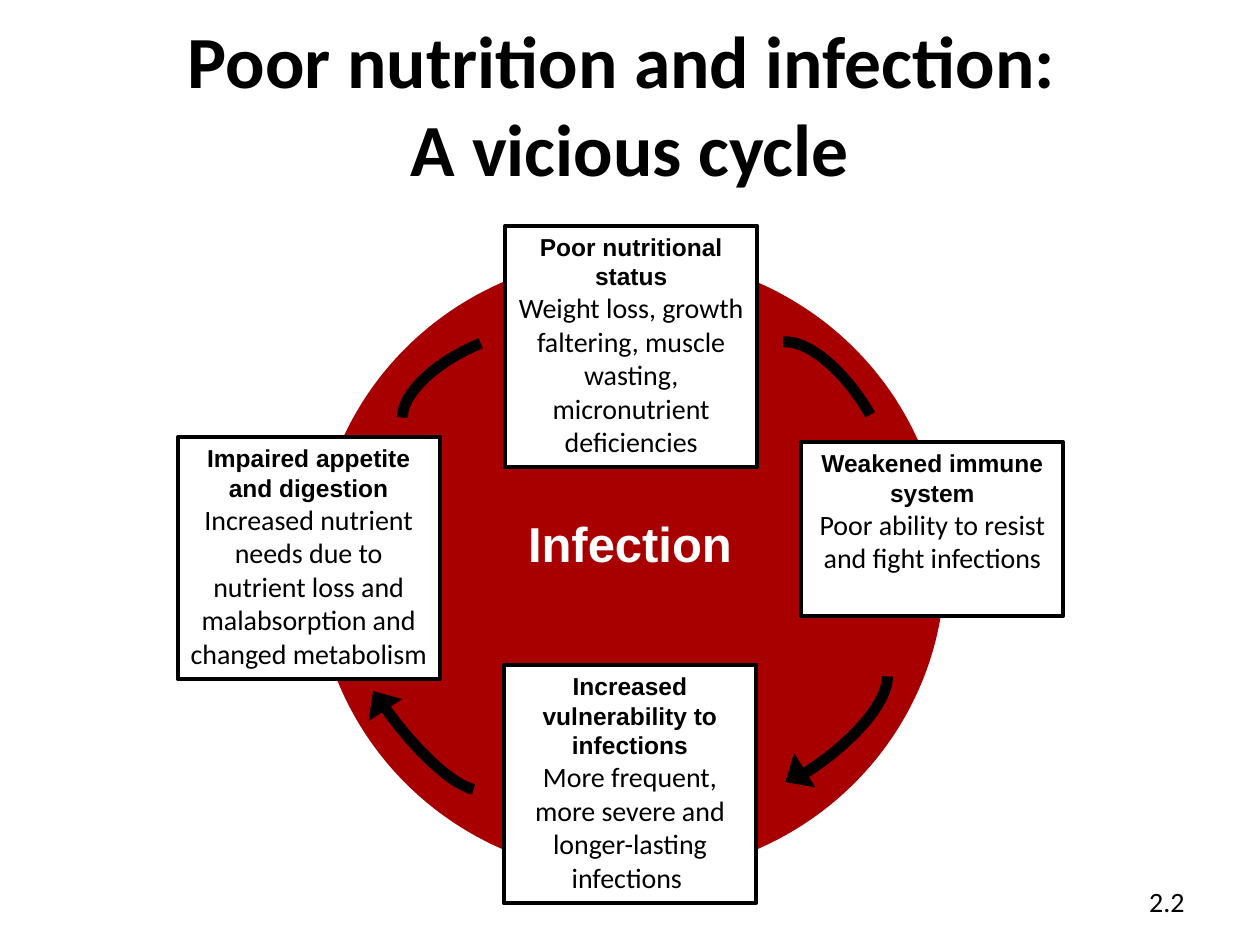
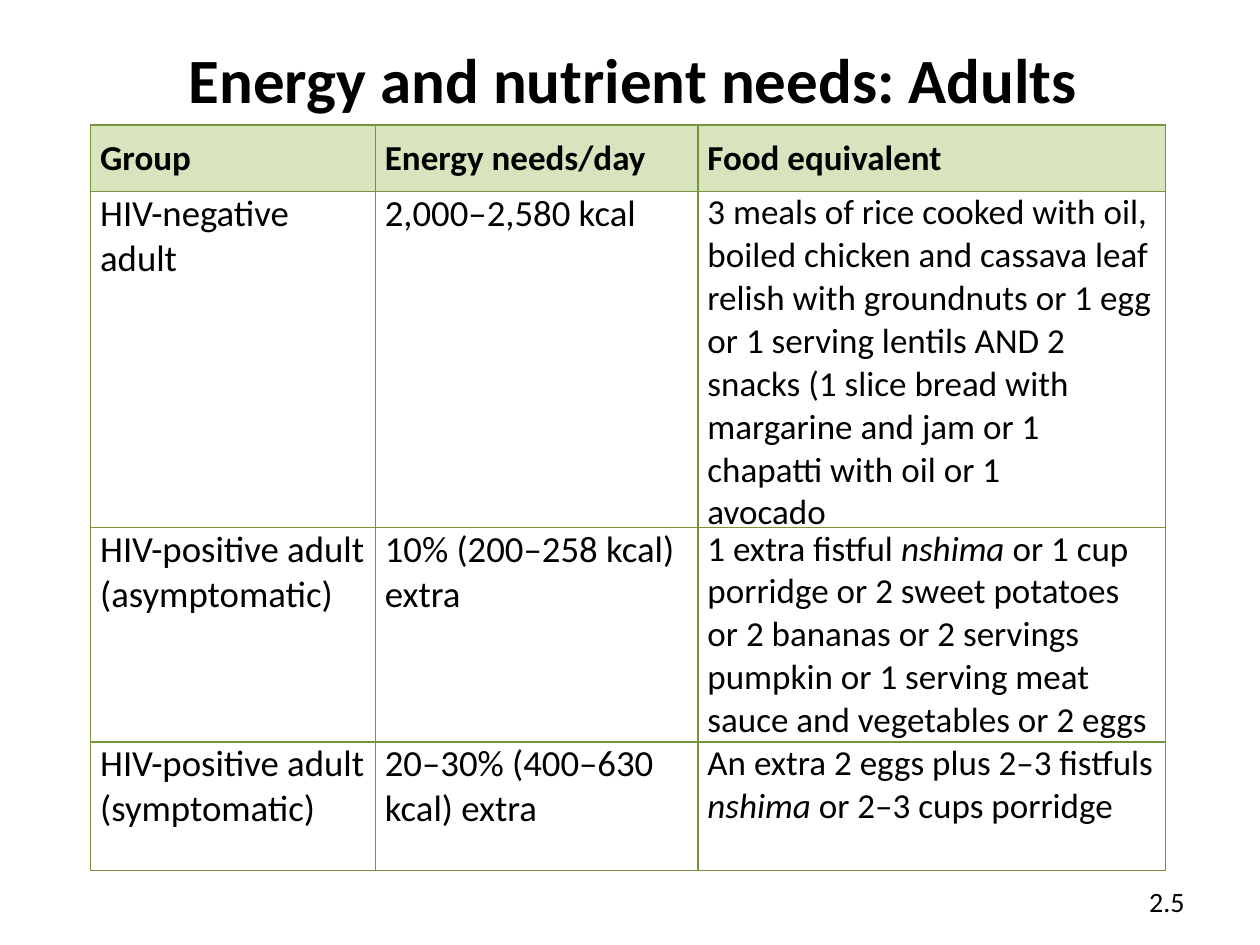
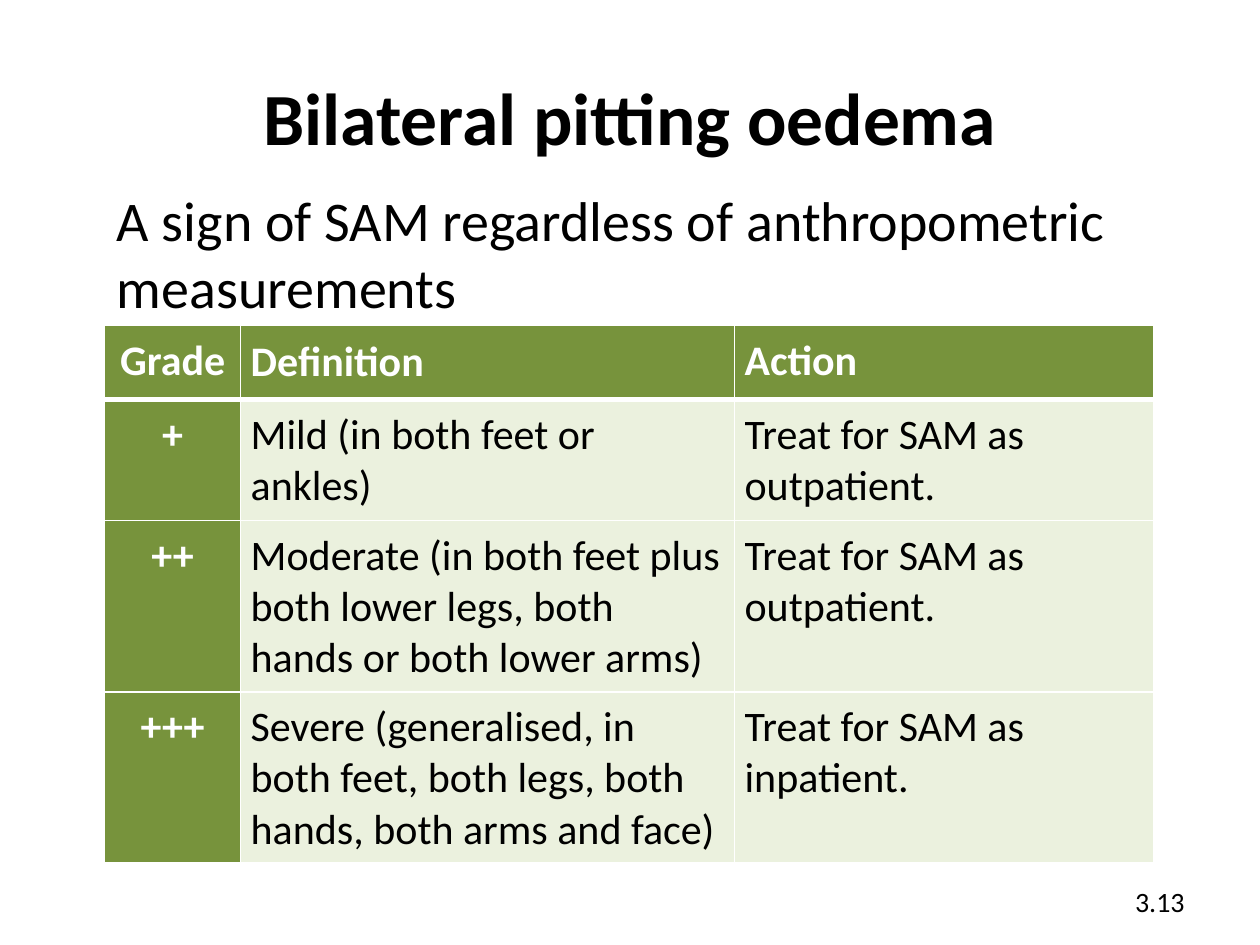
import pptx
import pptx.dml.color
import pptx.enum.shapes
import pptx.enum.text
import pptx.oxml
import pptx.oxml.ns
import pptx.util

RGBColor = pptx.dml.color.RGBColor
Align = pptx.enum.text.PP_ALIGN
Anchor = pptx.enum.text.MSO_ANCHOR
Preset = pptx.enum.shapes.MSO_SHAPE

BLACK = RGBColor(0x00, 0x00, 0x00)
WHITE = RGBColor(0xFF, 0xFF, 0xFF)
RED = RGBColor(0xA8, 0x00, 0x00)
GREEN = RGBColor(0x77, 0x93, 0x3C)
LIGHT_GREEN = RGBColor(0xD7, 0xE4, 0xBD)
PALE_GREEN = RGBColor(0xEB, 0xF1, 0xDE)

BODY_FONT = "Calibri"
LABEL_FONT = "Arial"
SLIDE_WIDTH = pptx.util.Inches(10)
SLIDE_HEIGHT = pptx.util.Inches(7.5)
GRID_COLUMNS = 100
GRID_ROWS = 75
TITLE_ONLY_LAYOUT = 5

CYCLE_BOXES = [
    ((40.1, 17.9, 20, 19.2), "Poor nutritional status",
     "Weight loss, growth faltering, muscle wasting, micronutrient deficiencies"),
    ((40, 52.8, 20, 18.9), "Increased vulnerability to infections",
     "More frequent, more severe and longer-lasting infections "),
    ((14.1, 34.7, 20.8, 19.2), "Impaired appetite and digestion",
     "Increased nutrient needs due to nutrient loss and malabsorption and changed metabolism"),
    ((63.6, 35.1, 20.8, 13.8), "Weakened immune system",
     "Poor ability to resist and fight infections"),
]
CYCLE_ARCS = [
    ((61.9, 26.2, 7.7, 17.3), 329.8, (165.15, 0)),
    ((29.9, 44.3, 5.7, 20.1), 144.6, (165.15, 215.44)),
    ((35.8, 22.6, 7.6, 16.3), 247.5, (165.15, 0)),
    ((58, 48.2, 7.7, 19.8), 57.3, (165.32, 0.2)),
]
CYCLE_ARROWHEADS = [
    ((61.5, 60.7, 3.2, 1.8), 238.2),
    ((28.5, 54.7, 3.2, 1.8), 326.9),
]

ENERGY_ROWS = [
    [["Group"], ["Energy needs/day"], ["Food equivalent"]],
    [["HIV-negative adult"], ["2,000–2,580 kcal"],
     ["3 meals of rice cooked with oil, boiled chicken and cassava leaf relish with "
      "groundnuts or 1 egg or 1 serving lentils AND 2 snacks (1 slice bread with "
      "margarine and jam or 1 chapatti with oil or 1", "avocado"]],
    [["HIV-positive adult (asymptomatic)"], ["10% (200–258 kcal) extra"],
     ["1 extra fistful *nshima *or 1 cup porridge or 2 sweet potatoes or 2 bananas or "
      "2 servings pumpkin or 1 serving meat sauce and vegetables or 2 eggs"]],
    [["HIV-positive adult (symptomatic)"], ["20–30% (400–630 kcal) extra"],
     ["An extra 2 eggs plus 2–3 fistfuls *nshima* or 2–3 cups porridge"]],
]
ENERGY_SPACING = {(0, 0): 3, (0, 1): 3, (0, 2): 3, (1, 0): 3, (1, 1): 3, (3, 1): 3, (3, 2): 2}

OEDEMA_ROWS = [
    [["Grade"], ["Definition"], ["Action"]],
    [["+"], ["Mild (in both feet or ankles)"], ["Treat for SAM as outpatient."]],
    [["++"], ["Moderate (in both feet plus both lower legs, both hands or both lower arms)"],
     ["Treat for SAM as outpatient."]],
    [["+++"], ["Severe (generalised, in both feet, both legs, both hands, both arms and face)"],
     ["Treat for SAM as inpatient."]],
]


def across(columns):
    return round(SLIDE_WIDTH * columns / GRID_COLUMNS)


def down(rows):
    return round(SLIDE_HEIGHT * rows / GRID_ROWS)


def area(left, top, width, height):
    return across(left), down(top), across(width), down(height)


def format_paragraph(paragraph, size, color=BLACK, bold=False, align=Align.LEFT,
                     font=BODY_FONT, spacing=0):
    paragraph.alignment = align
    paragraph.space_before = paragraph.space_after = pptx.util.Pt(spacing)
    paragraph.font.name = font
    paragraph.font.size = pptx.util.Pt(size)
    paragraph.font.bold = bold
    paragraph.font.color.rgb = color


def add_title_slide(presentation, title, place, size, number):
    slide = presentation.slides.add_slide(presentation.slide_layouts[TITLE_ONLY_LAYOUT])
    heading = slide.shapes.title
    heading.left, heading.top, heading.width, heading.height = area(*place)
    frame = heading.text_frame
    frame.text = title
    frame.auto_size = pptx.enum.text.MSO_AUTO_SIZE.NONE
    frame.vertical_anchor = Anchor.MIDDLE
    format_paragraph(frame.paragraphs[0], size, bold=True, align=Align.CENTER)
    add_text(slide, (71.7, 69.5, 23.3, 4), number, 16, anchor=Anchor.MIDDLE, align=Align.RIGHT)
    return slide


def add_text(slide, place, text, size, anchor=Anchor.TOP, **style):
    frame = slide.shapes.add_textbox(*area(*place)).text_frame
    frame.word_wrap = True
    frame.vertical_anchor = anchor
    frame.text = text
    format_paragraph(frame.paragraphs[0], size, **style)


def add_preset(slide, preset, place, fill=None, line_width=0, rotation=0):
    shape = slide.shapes.add_shape(preset, *area(*place))
    shape.shadow.inherit = False
    shape.rotation = rotation
    if fill is None:
        shape.fill.background()
    else:
        shape.fill.solid()
        shape.fill.fore_color.rgb = fill
    if line_width:
        shape.line.color.rgb = BLACK
        shape.line.width = pptx.util.Pt(line_width)
    else:
        shape.line.fill.background()
    return shape


def add_cycle_box(slide, place, label, detail):
    frame = add_preset(slide, Preset.RECTANGLE, place, WHITE, 2.25).text_frame
    frame.word_wrap = True
    frame.vertical_anchor = Anchor.TOP
    frame.text = f"{label}\n{detail}"
    label_paragraph, detail_paragraph = frame.paragraphs
    format_paragraph(label_paragraph, 14, bold=True, align=Align.CENTER, font=LABEL_FONT)
    format_paragraph(detail_paragraph, 16, align=Align.CENTER)


def add_arc(slide, place, rotation, angles):
    arc = add_preset(slide, Preset.ARC, place, line_width=6.25, rotation=rotation)
    for index, angle in enumerate(angles):
        arc.adjustments[index] = angle


def set_borders(cell, color, widths):
    properties = cell._tc.get_or_add_tcPr()
    for side, width in zip("LRTB", widths):
        properties.append(pptx.oxml.parse_xml(
            f'<a:ln{side} {pptx.oxml.ns.nsdecls("a")} w="{pptx.util.Pt(width)}">'
            f'<a:solidFill><a:srgbClr val="{color}"/></a:solidFill></a:ln{side}>'))


def fill_cell(cell, texts, margins, fill, anchor=Anchor.TOP, **style):
    cell.margin_left = cell.margin_right = across(margins[0])
    cell.margin_top = cell.margin_bottom = down(margins[1])
    cell.vertical_anchor = anchor
    if fill is None:
        cell.fill.background()
    else:
        cell.fill.solid()
        cell.fill.fore_color.rgb = fill
    frame = cell.text_frame
    for index, text in enumerate(texts):
        paragraph = frame.add_paragraph() if index else frame.paragraphs[0]
        format_paragraph(paragraph, **style)
        for part, words in enumerate(text.split("*")):
            run = paragraph.add_run()
            run.text = words
            if part % 2:
                run.font.italic = True


def add_grid_table(slide, left, top, widths, heights, rows, border, header_line, margins, cell_style):
    place = area(left, top, sum(widths), sum(heights))
    table = slide.shapes.add_table(len(rows), len(widths), *place).table
    table.first_row = table.horz_banding = False
    for column, width in zip(table.columns, widths):
        column.width = across(width)
    for row, height in zip(table.rows, heights):
        row.height = down(height)
    for row_index, row in enumerate(rows):
        for column_index, texts in enumerate(row):
            cell = table.cell(row_index, column_index)
            above = header_line if row_index == 1 else 1
            below = header_line if row_index == 0 else 1
            set_borders(cell, border, (1, 1, above, below))
            fill_cell(cell, texts, margins, **cell_style(row_index, column_index))


def energy_cell_style(row, column):
    header = row == 0
    return dict(fill=LIGHT_GREEN if header else None,
                anchor=Anchor.MIDDLE if header else Anchor.TOP,
                size=20 if header or column == 2 else 21,
                bold=header, spacing=ENERGY_SPACING.get((row, column), 0))


def oedema_cell_style(row, column):
    heading = row == 0 or column == 0
    return dict(fill=GREEN if heading else PALE_GREEN,
                anchor=Anchor.MIDDLE if (row, column) == (0, 1) else Anchor.TOP,
                size=24, bold=heading, color=WHITE if heading else BLACK,
                align=Align.LEFT if column else Align.CENTER)


def build_cycle_slide(presentation):
    slide = add_title_slide(presentation, "Poor nutrition and infection: \vA vicious cycle",
                            (0, 1.9, 100, 12.5), 42, "2.2")
    add_preset(slide, Preset.OVAL, (25, 20.3, 50, 49.2), RED)
    for box in CYCLE_BOXES:
        add_cycle_box(slide, *box)
    add_text(slide, (40, 40.3, 20, 5.7), "Infection", 28, color=WHITE, bold=True,
             align=Align.CENTER, font=LABEL_FONT)
    for arc in CYCLE_ARCS:
        add_arc(slide, *arc)
    for place, rotation in CYCLE_ARROWHEADS:
        add_preset(slide, Preset.ISOSCELES_TRIANGLE, place, BLACK, rotation=rotation)


def build_energy_slide(presentation):
    slide = add_title_slide(presentation, "Energy and nutrient needs: Adults",
                            (0.2, 0, 100.1, 12.5), 36, "2.5")
    add_grid_table(slide, 7.2, 9.9, (22.6, 25.6, 37.1), (5.3, 25.9, 17, 10.2), ENERGY_ROWS,
                   GREEN, 1, (0.75, 0), energy_cell_style)


def build_oedema_slide(presentation):
    slide = add_title_slide(presentation, "Bilateral pitting oedema", (5, 3, 90, 12.5), 42, "3.13")
    add_text(slide, (8.3, 14.2, 87.1, 11.6),
             "A sign of SAM regardless of anthropometric measurements", 32, spacing=6.4)
    add_grid_table(slide, 8.3, 25.8, (10.8, 39.2, 33.3), (5.9, 9.6, 13.6, 13.6), OEDEMA_ROWS,
                   WHITE, 3, (0.8, 0.8), oedema_cell_style)


def main():
    presentation = pptx.Presentation()
    presentation.slide_width = SLIDE_WIDTH
    presentation.slide_height = SLIDE_HEIGHT
    build_cycle_slide(presentation)
    build_energy_slide(presentation)
    build_oedema_slide(presentation)
    presentation.save("out.pptx")


if __name__ == "__main__":
    main()
